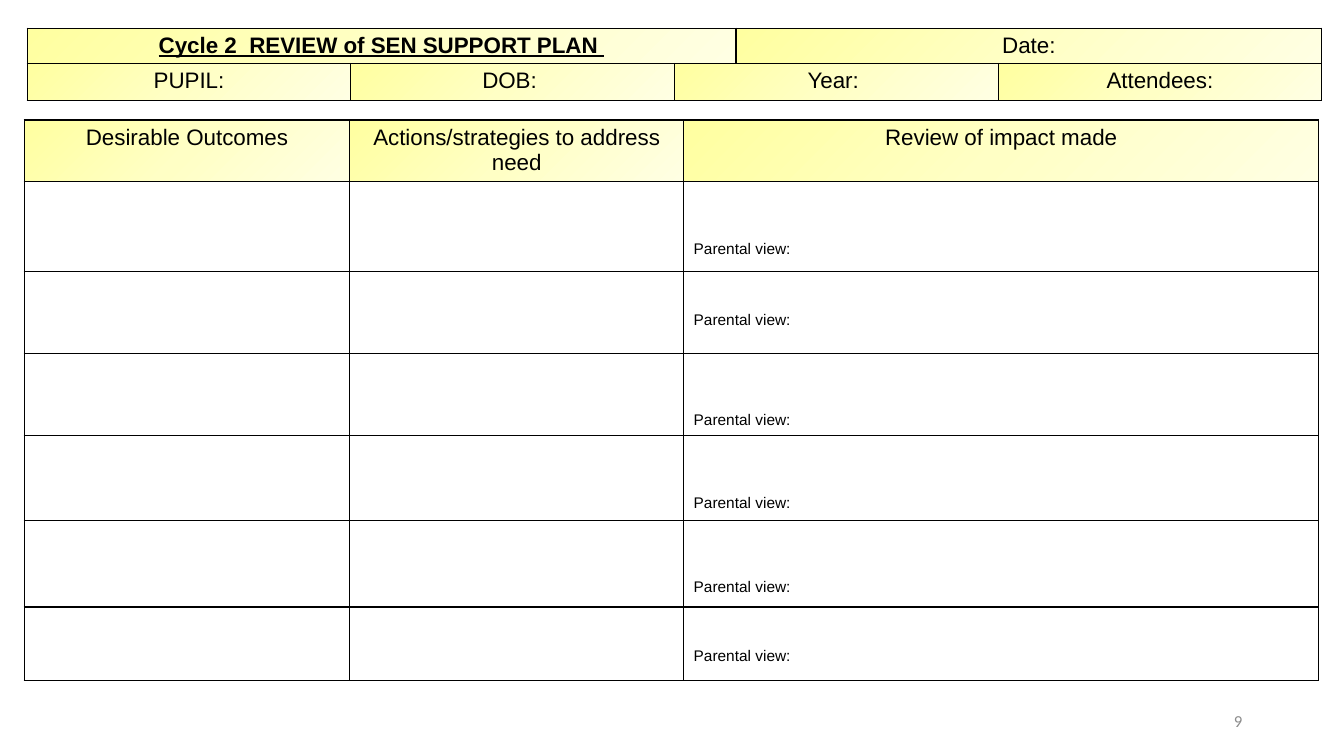
from lxml import etree
from pptx import Presentation
from pptx.dml.color import RGBColor
from pptx.enum.text import MSO_ANCHOR, PP_ALIGN
from pptx.oxml.ns import qn
from pptx.util import Inches, Pt

CENTER, LEFT, RIGHT = PP_ALIGN.CENTER, PP_ALIGN.LEFT, PP_ALIGN.RIGHT
MIDDLE = MSO_ANCHOR.MIDDLE
BLACK = RGBColor(0x00, 0x00, 0x00)
WHITE = RGBColor(0xFF, 0xFF, 0xFF)
GREY = RGBColor(0x8C, 0x8C, 0x8C)
YELLOW_STOPS = [
    (0, RGBColor(0xFF, 0xFF, 0xA0)),
    (50, RGBColor(0xFF, 0xFF, 0xC5)),
    (100, RGBColor(0xFF, 0xFF, 0xE3)),
]

HEADING = {"name": "Arial", "size": Pt(16), "bold": False}
TITLE = {**HEADING, "bold": True, "underline": True}
VIEW = {**HEADING, "size": Pt(11)}
NUMBER = {"name": "Calibri", "size": Pt(12)}

PUPIL_COLUMNS = [3.21, 3.21, 0.61, 2.6, 3.21]
PUPIL_ROWS = [0.35, 0.37]
PUPIL_HEADINGS = [
    (0, 0, 2, "Cycle 2  REVIEW of SEN SUPPORT PLAN ", TITLE),
    (0, 3, 4, "Date:", HEADING),
    (1, 0, 0, "PUPIL:", HEADING),
    (1, 1, 1, "DOB: ", HEADING),
    (1, 2, 3, "Year: ", HEADING),
    (1, 4, 4, "Attendees:", HEADING),
]
REVIEW_COLUMNS = [3.23, 3.31, 6.3]
REVIEW_ROWS = [0.59, 0.89, 0.81, 0.82, 0.84, 0.86, 0.73]
REVIEW_HEADINGS = [
    "Desirable Outcomes",
    "Actions/strategies to address need",
    "Review of impact made",
]
VIEW_OFFSETS = [0.58, 0.4, 0.58, 0.58, 0.58, 0.4]


def write_text(frame, text, style, color, align):
    para = frame.paragraphs[0]
    para.alignment = align
    span = para.add_run()
    span.text = text
    for name, value in style.items():
        setattr(span.font, name, value)
    span.font.color.rgb = color


def add_color(parent, color):
    etree.SubElement(parent, qn("a:srgbClr"), val=str(color))


def add_borders(cell):
    properties = cell._tc.get_or_add_tcPr()
    for side in ("a:lnL", "a:lnR", "a:lnT", "a:lnB"):
        line = etree.SubElement(properties, qn(side), w=str(Pt(1)))
        add_color(etree.SubElement(line, qn("a:solidFill")), BLACK)


def fill_yellow(cell):
    properties = cell._tc.get_or_add_tcPr()
    gradient = etree.SubElement(properties, qn("a:gradFill"), rotWithShape="1")
    stops = etree.SubElement(gradient, qn("a:gsLst"))
    for percent, color in YELLOW_STOPS:
        add_color(etree.SubElement(stops, qn("a:gs"), pos=str(percent * 1000)), color)
    etree.SubElement(gradient, qn("a:lin"), ang=str(45 * 60000), scaled="1")


def fill_white(cell):
    cell.fill.solid()
    cell.fill.fore_color.rgb = WHITE


def add_grid(page, left, top, columns, rows, yellow_rows):
    table = page.shapes.add_table(
        len(rows), len(columns), Inches(left), Inches(top),
        Inches(sum(columns)), Inches(sum(rows)),
    ).table
    table.first_row = False
    table.horz_banding = False
    for column, width in zip(table.columns, columns):
        column.width = Inches(width)
    for index, (row, height) in enumerate(zip(table.rows, rows)):
        row.height = Inches(height)
        for cell in row.cells:
            cell.margin_bottom = Inches(0.03)
            add_borders(cell)
            if index < yellow_rows:
                fill_yellow(cell)
            else:
                fill_white(cell)
    return table


def add_pupil_table(page):
    table = add_grid(page, 0.27, 0.28, PUPIL_COLUMNS, PUPIL_ROWS, 2)
    for row, first, last, text, style in PUPIL_HEADINGS:
        cell = table.cell(row, first)
        if last > first:
            cell.merge(table.cell(row, last))
        write_text(cell.text_frame, text, style, BLACK, CENTER)


def add_review_table(page):
    table = add_grid(page, 0.24, 1.19, REVIEW_COLUMNS, REVIEW_ROWS, 1)
    for column, text in enumerate(REVIEW_HEADINGS):
        write_text(table.cell(0, column).text_frame, text, HEADING, BLACK, CENTER)
    for row, offset in enumerate(VIEW_OFFSETS, start=1):
        cell = table.cell(row, 2)
        cell.margin_top = Inches(offset)
        write_text(cell.text_frame, "Parental view:", VIEW, BLACK, LEFT)


def add_page_number(page):
    box = page.shapes.add_textbox(Inches(9.42), Inches(6.95), Inches(3), Inches(0.4))
    box.text_frame.word_wrap = True
    box.text_frame.vertical_anchor = MIDDLE
    write_text(box.text_frame, "9", NUMBER, GREY, RIGHT)


def main():
    deck = Presentation()
    deck.slide_width = Inches(13.33)
    deck.slide_height = Inches(7.5)
    page = deck.slides.add_slide(deck.slide_layouts[6])
    add_page_number(page)
    add_pupil_table(page)
    add_review_table(page)
    deck.save("out.pptx")


if __name__ == "__main__":
    main()
